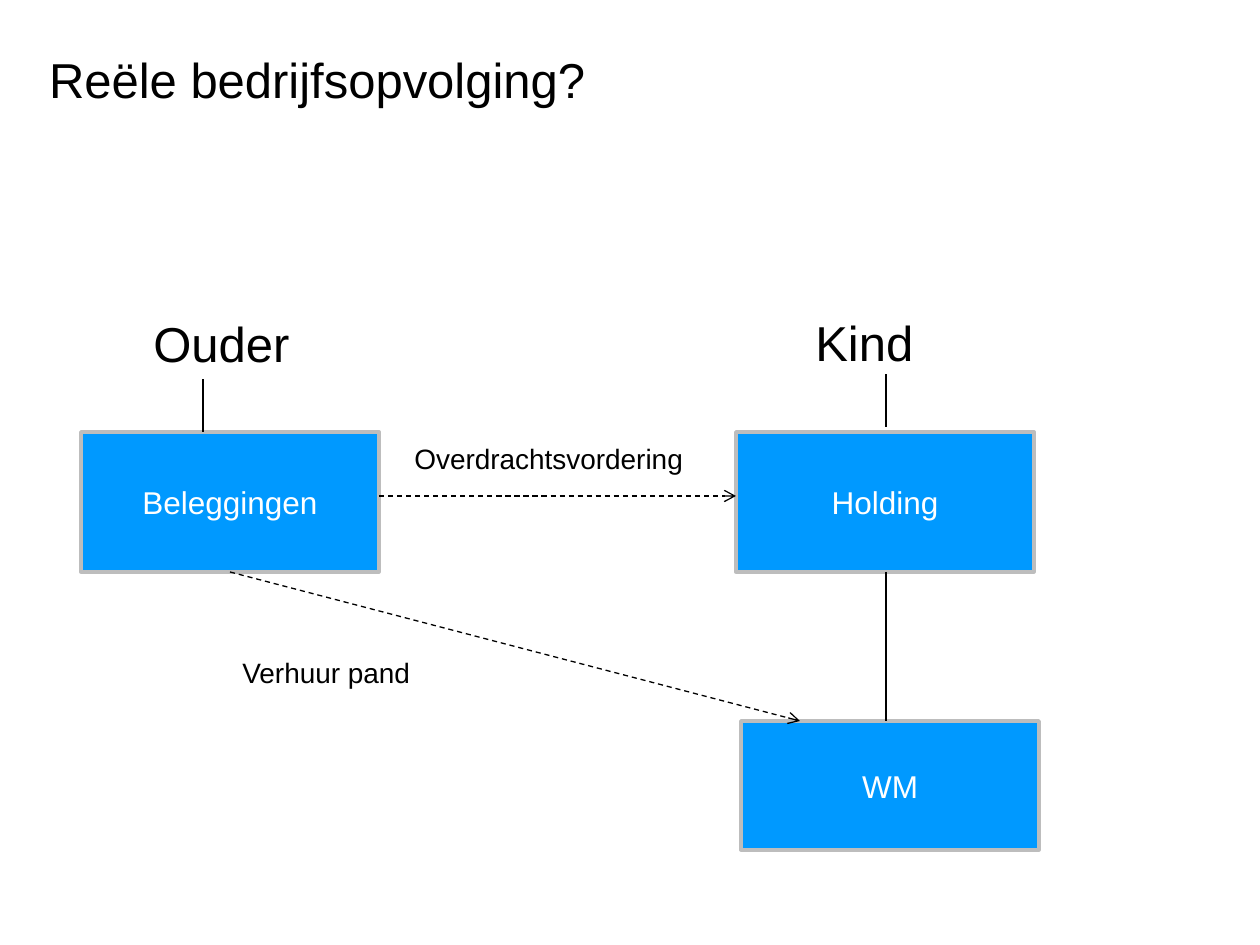
from lxml.etree import SubElement
from pptx import Presentation
from pptx.dml.color import RGBColor
from pptx.enum.dml import MSO_LINE
from pptx.enum.shapes import MSO_CONNECTOR, MSO_SHAPE
from pptx.enum.text import MSO_ANCHOR, MSO_AUTO_SIZE, PP_ALIGN
from pptx.oxml.ns import qn
from pptx.util import Emu, Pt

PX = 914400 / 126
BLACK, WHITE, BLUE, GREY = "000000", "FFFFFF", "0099FF", "BDBDBD"
BOX_W = 298
HOLDING_X = 886


def px(*values):
    return [Emu(round(v * PX)) for v in values]


def rgb(value):
    return RGBColor.from_string(value)


def write(tf, text, size, color=BLACK, align=PP_ALIGN.LEFT,
          anchor=MSO_ANCHOR.TOP, auto_size=MSO_AUTO_SIZE.NONE):
    """Fill a text frame with one formatted paragraph."""
    tf.word_wrap = True
    tf.auto_size = auto_size
    tf.vertical_anchor = anchor
    p = tf.paragraphs[0]
    p.alignment = align
    r = p.add_run()
    r.text = text
    r.font.name = "Arial"
    r.font.size = Pt(size)
    r.font.color.rgb = rgb(color)


def add_title(s, text):
    title = s.shapes.title
    title.left, title.top, title.width, title.height = px(49, 49, 1160, 198)
    tf = title.text_frame
    tf.margin_left = tf.margin_top = tf.margin_right = tf.margin_bottom = 0
    write(tf, text, 28)


def add_box(s, text, x, y, h):
    sp = s.shapes.add_shape(MSO_SHAPE.RECTANGLE, *px(x, y, BOX_W, h))
    sp.shadow.inherit = False
    sp.fill.solid()
    sp.fill.fore_color.rgb = rgb(BLUE)
    sp.line.color.rgb = rgb(GREY)
    sp.line.width = Pt(2)
    write(sp.text_frame, text, 18, color=WHITE, align=PP_ALIGN.CENTER,
          anchor=MSO_ANCHOR.MIDDLE)


def add_label(s, text, x, y, w, h, size):
    sp = s.shapes.add_textbox(*px(x, y, w, h))
    write(sp.text_frame, text, size, auto_size=MSO_AUTO_SIZE.SHAPE_TO_FIT_TEXT)


def add_line(s, x1, y1, x2, y2, arrow=False):
    """Draw a thin line; an arrow is dashed with an open head at its end."""
    line = s.shapes.add_connector(MSO_CONNECTOR.STRAIGHT, *px(x1, y1, x2, y2))
    line.line.color.rgb = rgb(BLACK)
    line.line.width = Pt(0.75)
    if arrow:
        line.line.dash_style = MSO_LINE.DASH
        SubElement(line.line._get_or_add_ln(), qn("a:tailEnd"), type="arrow")
    SubElement(line._element.spPr, qn("a:effectLst"))


def main():
    prs = Presentation()
    prs.slide_width, prs.slide_height = px(1260, 945)
    s = prs.slides.add_slide(prs.slide_layouts[5])
    add_title(s, "Reële bedrijfsopvolging?")

    add_box(s, "Beleggingen", 81, 432, 140)
    add_box(s, "Holding", 736, 432, 140)
    add_box(s, "WM", 741, 721, 129)

    add_label(s, "Ouder", 141, 307, 179, 72, 28)
    add_label(s, "Kind", 803, 306, 179, 72, 28)
    add_label(s, "Verhuur pand", 230, 649, 239, 47, 16)
    add_label(s, "Overdrachtsvordering", 402, 435, 307, 47, 16)

    add_line(s, 203, 432, 203, 379)
    add_line(s, HOLDING_X, 427, HOLDING_X, 374)
    add_line(s, HOLDING_X, 572, HOLDING_X, 721)
    add_line(s, 230, 572, 800, 721, arrow=True)
    add_line(s, 379, 496, 736, 496, arrow=True)

    prs.save("out.pptx")


if __name__ == "__main__":
    main()
